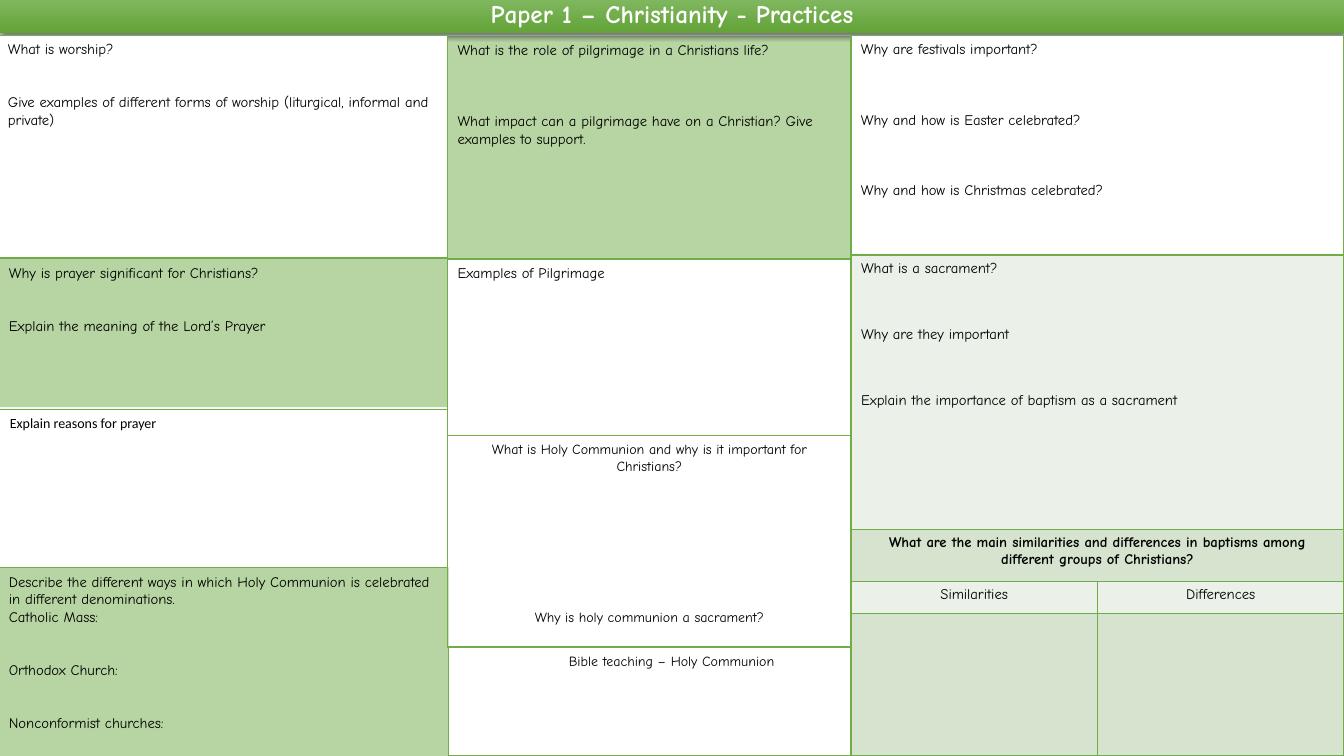
"""Builds a revision worksheet slide on Christian practices."""
from lxml import etree
from pptx import Presentation
from pptx.dml.color import RGBColor
from pptx.enum.shapes import MSO_SHAPE
from pptx.enum.text import MSO_ANCHOR, PP_ALIGN
from pptx.oxml import parse_xml
from pptx.util import Inches, Pt

RECT = MSO_SHAPE.RECTANGLE
TOP, MIDDLE = MSO_ANCHOR.TOP, MSO_ANCHOR.MIDDLE
LEFT, CENTER = PP_ALIGN.LEFT, PP_ALIGN.CENTER
NS = "http://schemas.openxmlformats.org/drawingml/2006/main"
GREEN, WHITE, BLACK = "70AD47", "FFFFFF", "000000"
PALE, SAGE = "EBF1E9", "D5E3CF"


def rgb(value):
    return RGBColor.from_string(value)


def write(tf, paras, size=10.5, align=LEFT, bold=False, color=BLACK, font="Comic Neue", pitch=1.2):
    tf.word_wrap = True
    for i, (text, gap) in enumerate(paras):
        p = tf.paragraphs[0] if i == 0 else tf.add_paragraph()
        p.alignment = align
        if gap:
            p.space_before = Pt(round(gap * size * pitch, 1))
        r = p.add_run()
        r.text = text
        r.font.name, r.font.size, r.font.bold = font, Pt(size), bold
        r.font.color.rgb = rgb(color)


prs = Presentation()
prs.slide_width, prs.slide_height = Inches(13.33), Inches(7.5)
s = prs.slides.add_slide(prs.slide_layouts[6])

# Each panel: box, fill, line width, text size, alignment, (text, blank lines above)
panels = [
    ((4.45, 6.42, 4.42, 1.08), WHITE, 1, 10, CENTER, [("Bible teaching – Holy Communion", 0)]),
    ((4.44, 0.36, 4, 2.46), GREEN, 0, 10.5, LEFT, [
        ("What is the role of pilgrimage in a Christians life?", 0),
        ("What impact can a pilgrimage have on a Christian? Give examples to support.", 3)]),
    ((0, -0.02, 13.33, 0.35), "title", 0, 18, CENTER, [("Paper 1 – Christianity - Practices", 0)]),
    ((-0.02, 0.35, 4.46, 2.21), WHITE, 1, 10.5, LEFT, [
        ("What is worship?", 0),
        ("Give examples of different forms of worship (liturgical, informal and private)", 2)]),
    ((-0.01, 2.57, 4.46, 1.47), GREEN, 0, 10.5, LEFT, [
        ("Why is prayer significant for Christians?", 0),
        ("Explain the meaning of the Lord’s Prayer", 2)]),
    ((8.44, 0.35, 4.89, 2.18), WHITE, 1, 10.5, LEFT, [
        ("Why are festivals important?", 0),
        ("Why and how is Easter celebrated?", 3),
        ("Why and how is Christmas celebrated?", 3)]),
    ((4.44, 4.32, 4, 2.1), None, 0.75, 10, CENTER, [
        ("What is Holy Communion and why is it important for Christians?", 0),
        ("Why is holy communion a sacrament?", 8)]),
    ((-0.01, 5.63, 4.46, 1.87), GREEN, 0, 10.5, LEFT, [
        ("Describe the different ways in which Holy Communion is celebrated in different denominations.", 0),
        ("Catholic Mass:", 0),
        ("Orthodox Church:", 2),
        ("Nonconformist churches:", 2)]),
    ((0, 4.06, 4.44, 1.57), None, 0.75, 10, LEFT, []),
    ((4.44, 2.57, 4, 1.75), WHITE, 1, 10.5, LEFT, [("Examples of Pilgrimage", 0)]),
]
for box, fill, line, size, align, paras in panels:
    sp = s.shapes.add_shape(RECT, *map(Inches, box))
    sp.shadow.inherit = False
    title = fill == "title"
    if title:
        sp.fill.gradient()
        sp.fill.gradient_angle = 270
        for stop, color in zip(sp.fill.gradient_stops, ("81B861", "62A336")):
            stop.color.rgb = rgb(color)
        effects = sp._element.spPr.find(f"{{{NS}}}effectLst")
        effects.append(parse_xml(
            f'<a:outerShdw xmlns:a="{NS}" blurRad="57150" dist="19050" dir="5400000" algn="ctr" rotWithShape="0">'
            '<a:srgbClr val="000000"><a:alpha val="63000"/></a:srgbClr></a:outerShdw>'))
    elif fill:
        sp.fill.solid()
        sp.fill.fore_color.rgb = rgb(fill)
        if fill == GREEN:
            tint = sp._element.spPr.find(f".//{{{NS}}}srgbClr")
            etree.SubElement(tint, f"{{{NS}}}alpha", val="50000")
    else:
        sp.fill.background()
    if line:
        sp.line.color.rgb = rgb(GREEN)
        sp.line.width = Pt(line)
    else:
        sp.line.fill.background()
    tf = sp.text_frame
    tf.vertical_anchor = MIDDLE if title else TOP
    write(tf, paras, size, align, title, WHITE if title else BLACK)
    if title:
        tf.paragraphs[0].line_spacing = 0.9

table = s.shapes.add_table(4, 2, Inches(8.44), Inches(2.53), Inches(4.89), Inches(4.97)).table
for row, height in zip(table.rows, (2.72, 0.52, 0.32, 1.41)):
    row.height = Inches(height)
for i, color in enumerate((PALE, SAGE, PALE, SAGE)):
    for j in range(2):
        cell = table.cell(i, j)
        cell.fill.solid()
        cell.fill.fore_color.rgb = rgb(color)
        tcPr = cell._tc.get_or_add_tcPr()
        for k, side in enumerate(("lnL", "lnR", "lnT", "lnB")):
            tcPr.insert(k, parse_xml(
                f'<a:{side} xmlns:a="{NS}" w="12700"><a:solidFill><a:srgbClr val="{GREEN}"/></a:solidFill></a:{side}>'))
for i in range(2):
    table.cell(i, 0).merge(table.cell(i, 1))

write(table.cell(0, 0).text_frame, [
    ("What is a sacrament?", 0),
    ("Why are they important", 3),
    ("Explain the importance of baptism as a sacrament", 3)], pitch=1.12)
write(table.cell(1, 0).text_frame, [
    ("What are the main similarities and differences in baptisms among different groups of Christians?", 0)],
    align=CENTER, bold=True)
for j, heading in enumerate(("Similarities", "Differences")):
    write(table.cell(2, j).text_frame, [(heading, 0)], align=CENTER)

sp = s.shapes.add_textbox(Inches(0), Inches(4.06), Inches(1.76), Inches(0.27))
write(sp.text_frame, [("Explain reasons for prayer", 0)], 10, font="Calibri")

prs.save("out.pptx")
